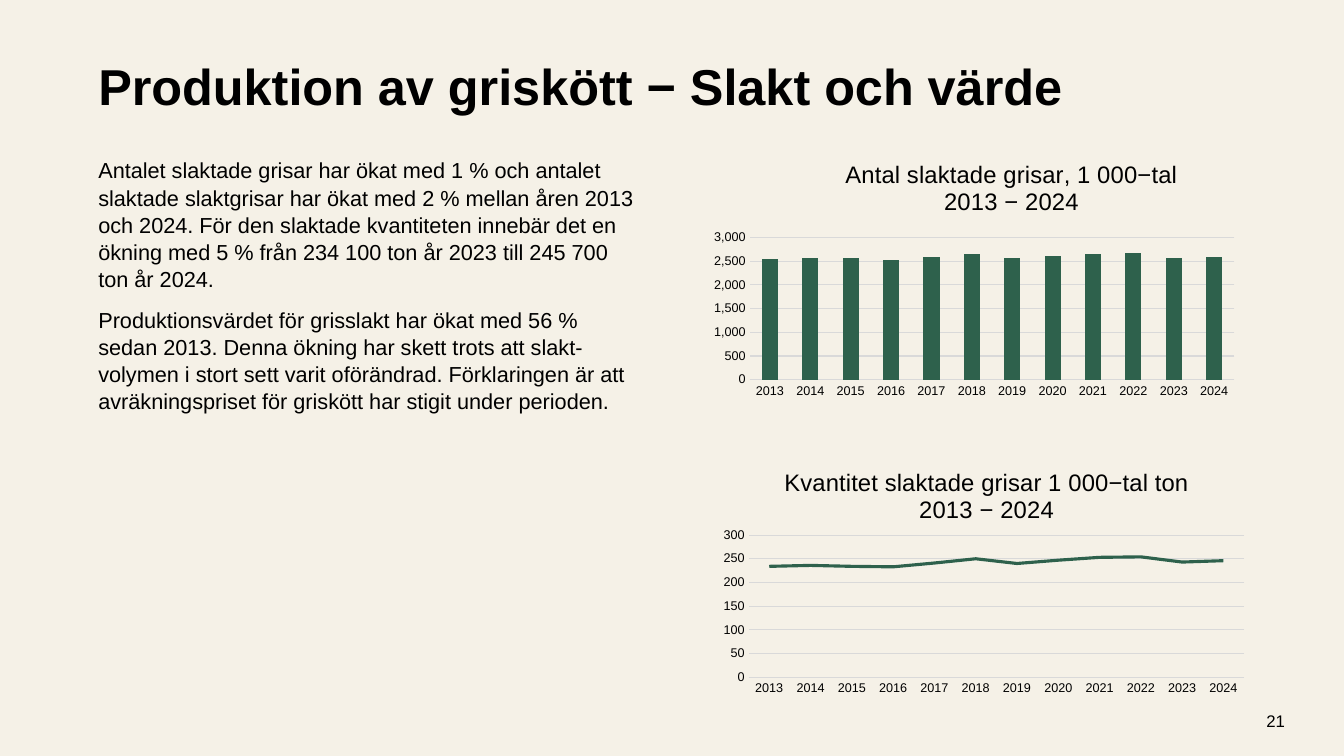
from dataclasses import dataclass

from lxml.etree import SubElement
from pptx import Presentation
from pptx.chart.data import CategoryChartData
from pptx.dml.color import RGBColor
from pptx.enum.chart import XL_CHART_TYPE, XL_TICK_MARK
from pptx.enum.text import MSO_ANCHOR, MSO_AUTO_SIZE, PP_ALIGN
from pptx.oxml.ns import qn
from pptx.util import Pt


@dataclass(frozen=True)
class Theme:
    font: str = "Arial"
    paper: RGBColor = RGBColor(0xF5, 0xF1, 0xE7)
    ink: RGBColor = RGBColor(0, 0, 0)
    green: RGBColor = RGBColor(0x2E, 0x61, 0x4C)
    grid: RGBColor = RGBColor(0xD9, 0xD9, 0xD9)
    heading_size: float = 36
    body_size: float = 15.5
    chart_title_size: float = 17
    page_size: float = 12
    chart_size: float = 10
    axis_size: float = 9


THEME = Theme()
YEARS = [str(year) for year in range(2013, 2025)]
HEADING = "Produktion av griskött − Slakt och värde"
FINDINGS = [
    "Antalet slaktade grisar har ökat med 1 % och antalet slaktade slaktgrisar "
    "har ökat med 2 % mellan åren 2013 och 2024. För den slaktade kvantiteten "
    "innebär det en ökning med 5 % från 234 100 ton år 2023 till 245 700 ton "
    "år 2024.",
    "Produktionsvärdet för grisslakt har ökat med 56 % sedan 2013. Denna ökning "
    "har skett trots att slakt-volymen i stort sett varit oförändrad. "
    "Förklaringen är att avräkningspriset för griskött har stigit under perioden.",
]
PIGS = [2550, 2560, 2560, 2530, 2580, 2650, 2570, 2620, 2650, 2670, 2570, 2580]
TONNES = [234, 236, 234, 233, 241, 250, 240, 247, 253, 254, 243, 246]


def style_font(font, size, bold=False):
    font.name = THEME.font
    font.size = Pt(size)
    font.bold = bold
    font.color.rgb = THEME.ink


def style_runs(paragraph, size, bold=False):
    for run in paragraph.runs:
        style_font(run.font, size, bold)


def place(shape, box):
    shape.left, shape.top, shape.width, shape.height = (Pt(length) for length in box)


def add_heading(slide, box):
    heading = slide.shapes.title
    place(heading, box)
    frame = heading.text_frame
    frame.text = HEADING
    frame.auto_size = MSO_AUTO_SIZE.NONE
    frame.vertical_anchor = MSO_ANCHOR.BOTTOM
    paragraph = frame.paragraphs[0]
    paragraph.alignment = PP_ALIGN.LEFT
    paragraph.line_spacing = 0.9
    style_runs(paragraph, THEME.heading_size, bold=True)


def add_findings(slide, box):
    findings = slide.placeholders[1]
    place(findings, box)
    frame = findings.text_frame
    frame.text = "\n".join(FINDINGS)
    frame.auto_size = MSO_AUTO_SIZE.NONE
    frame.vertical_anchor = MSO_ANCHOR.TOP
    for index, paragraph in enumerate(frame.paragraphs):
        properties = paragraph._p.get_or_add_pPr()
        properties.set("marL", "0")
        properties.set("indent", "0")
        SubElement(properties, qn("a:buNone"))
        paragraph.alignment = PP_ALIGN.LEFT
        paragraph.line_spacing = 1.04
        paragraph.space_before = Pt(10 if index else 0)
        style_runs(paragraph, THEME.body_size)


def add_page_number(slide, box):
    page = slide.shapes.add_textbox(*(Pt(length) for length in box))
    frame = page.text_frame
    frame.word_wrap = True
    frame.vertical_anchor = MSO_ANCHOR.MIDDLE
    frame.text = "21"
    frame.paragraphs[0].alignment = PP_ALIGN.RIGHT
    style_runs(frame.paragraphs[0], THEME.page_size)


def set_layout(parent, position, **settings):
    """Fix a chart part at the given child position, in fractions of the chart."""
    for old in parent.findall(qn("c:layout")):
        parent.remove(old)
    layout = parent.makeelement(qn("c:layout"))
    parent.insert(position, layout)
    manual = SubElement(layout, qn("c:manualLayout"))
    for name, value in settings.items():
        SubElement(manual, qn(f"c:{name}")).set("val", str(value))


def style_axes(chart, maximum):
    for axis in (chart.category_axis, chart.value_axis):
        axis.major_tick_mark = axis.minor_tick_mark = XL_TICK_MARK.NONE
        style_font(axis.tick_labels.font, THEME.axis_size)
    values = chart.value_axis
    values.minimum_scale, values.maximum_scale = 0, maximum
    values.major_unit = maximum / 6
    values.tick_labels.number_format = "#,##0"
    values.tick_labels.number_format_is_linked = False
    values.has_major_gridlines = True
    values.format.line.fill.background()
    for line in (chart.category_axis.format.line, values.major_gridlines.format.line):
        line.color.rgb = THEME.grid
        line.width = Pt(0.75)


def add_year_chart(slide, box, kind, title, values, maximum, title_at, plot_at):
    """Add a yearly chart and return its only series."""
    data = CategoryChartData()
    data.categories = YEARS
    data.add_series("Series 1", values)
    chart = slide.shapes.add_chart(kind, *(Pt(length) for length in box), data).chart
    chart.has_legend = False
    style_font(chart.font, THEME.chart_size)
    style_axes(chart, maximum)

    chart.has_title = True
    frame = chart.chart_title.text_frame
    frame.text = title
    for paragraph in frame.paragraphs:
        paragraph.alignment = PP_ALIGN.CENTER
        style_font(paragraph.font, THEME.chart_title_size)
        style_runs(paragraph, THEME.chart_title_size)
    x, y = title_at
    set_layout(chart.chart_title.element, 1, xMode="edge", yMode="edge", x=x, y=y)
    x, y, w, h = plot_at
    set_layout(chart.element.find(f".//{qn('c:plotArea')}"), 0, layoutTarget="inner",
               xMode="edge", yMode="edge", x=x, y=y, w=w, h=h)
    chart.plots[0].vary_by_categories = False
    return chart.plots[0].series[0]


def add_pigs_chart(slide, box):
    pigs = add_year_chart(
        slide, box, XL_CHART_TYPE.COLUMN_CLUSTERED,
        "Antal slaktade grisar, 1 000−tal\n2013 − 2024", PIGS, 3000,
        title_at=(0.26, 0.02), plot_at=(0.09, 0.34, 0.89, 0.56))
    pigs.format.fill.solid()
    pigs.format.fill.fore_color.rgb = THEME.green


def add_tonnes_chart(slide, box):
    tonnes = add_year_chart(
        slide, box, XL_CHART_TYPE.LINE,
        "Kvantitet slaktade grisar 1 000−tal ton\n2013 − 2024", TONNES, 300,
        title_at=(0.13, 0.06), plot_at=(0.07, 0.34, 0.91, 0.56))
    tonnes.smooth = False
    tonnes.format.line.color.rgb = THEME.green
    tonnes.format.line.width = Pt(2.25)


def main():
    deck = Presentation()
    deck.slide_width, deck.slide_height = Pt(960), Pt(540)
    slide = deck.slides.add_slide(deck.slide_layouts[1])
    slide.background.fill.solid()
    slide.background.fill.fore_color.rgb = THEME.paper
    add_heading(slide, (63, 37.5, 734, 49))
    add_findings(slide, (63, 108, 397, 194))
    add_pigs_chart(slide, (500.5, 108, 389, 181.5))
    add_tonnes_chart(slide, (507.5, 320.5, 389, 181.5))
    add_page_number(slide, (841.5, 500.5, 83.5, 29))
    deck.save("out.pptx")


if __name__ == "__main__":
    main()
